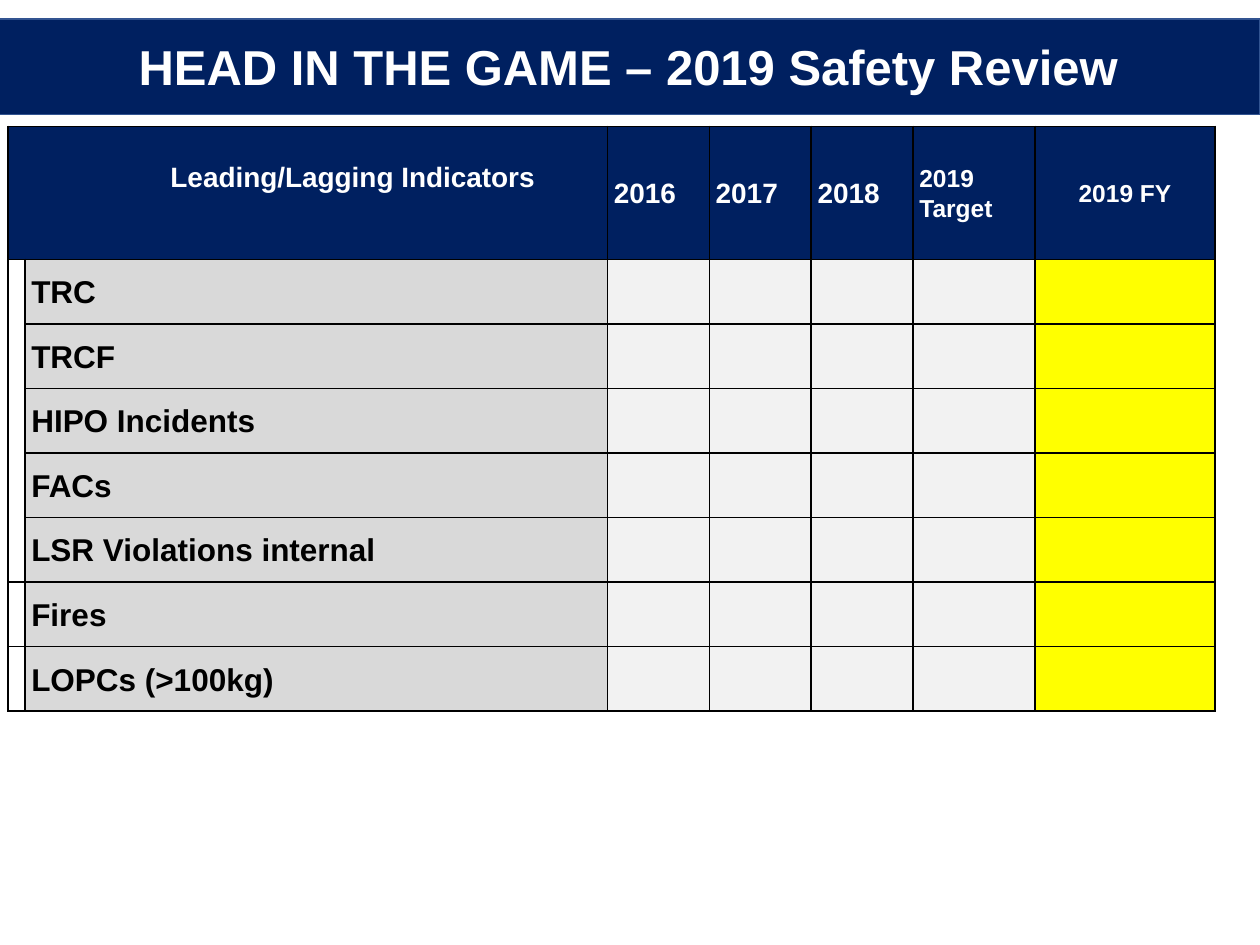
from lxml.etree import SubElement
from pptx import Presentation
from pptx.dml.color import RGBColor
from pptx.enum.shapes import MSO_SHAPE as Shape
from pptx.enum.text import MSO_ANCHOR as Anchor, PP_ALIGN as Align
from pptx.oxml.ns import qn
from pptx.util import Pt

NAVY = RGBColor(0x00, 0x20, 0x60)
EDGE = RGBColor(0x32, 0x54, 0x91)
WHITE = RGBColor(0xFF, 0xFF, 0xFF)
BLACK = RGBColor(0x00, 0x00, 0x00)
GREY = RGBColor(0xD9, 0xD9, 0xD9)
PALE = RGBColor(0xF2, 0xF2, 0xF2)
YELLOW = RGBColor(0xFF, 0xFF, 0x00)

COLUMNS = [9.7, 332.9, 58.2, 58.2, 58.2, 69.7, 102.9]
HEADER_HEIGHT, ROW_HEIGHT = 76, 36.9
HEADERS = [
    (0, "Leading/Lagging Indicators", 16, Align.CENTER),
    (2, "2016", 16, Align.LEFT),
    (3, "2017", 16, Align.LEFT),
    (4, "2018", 16, Align.LEFT),
    (5, "2019 Target", 14, Align.LEFT),
    (6, "2019 FY", 14, Align.CENTER),
]
INDICATORS = ["TRC", "TRCF", "HIPO Incidents", "FACs",
              "LSR Violations internal", "Fires", "LOPCs (>100kg)"]
INTERNAL_ROWS = 5


def write(para, text, size, color, align=Align.LEFT):
    """Put bold Arial text into a paragraph."""
    para.text = text
    para.alignment = align
    font = para.font
    font.name, font.size, font.bold = "Arial", Pt(size), True
    font.color.rgb = color


def add_border(cell):
    """Draw a thin black line on all four sides of a cell."""
    properties = cell._tc.get_or_add_tcPr()
    for side in ("a:lnL", "a:lnR", "a:lnT", "a:lnB"):
        line = SubElement(properties, qn(side), w=str(Pt(1)))
        fill = SubElement(line, qn("a:solidFill"))
        SubElement(fill, qn("a:srgbClr"), val=str(BLACK))


def style_cell(cell, fill=None):
    """Give a cell its border, insets and fill."""
    add_border(cell)
    cell.margin_left = cell.margin_right = Pt(3.6)
    cell.margin_top = cell.margin_bottom = 0
    cell.vertical_anchor = Anchor.MIDDLE
    if fill is None:
        cell.margin_left = cell.margin_right = 0
        cell.fill.background()
    else:
        cell.fill.solid()
        cell.fill.fore_color.rgb = fill


def write_cell(cell, text, size, color, align=Align.LEFT):
    """Write the single paragraph of a table cell."""
    para = cell.text_frame.paragraphs[0]
    write(para, text, size, color, align)
    para.line_spacing = 1.07


def add_title(page, left, top, width, height):
    """Add the navy band with the title over it."""
    band = page.shapes.add_shape(Shape.RECTANGLE, Pt(left), Pt(top), Pt(width), Pt(height))
    band.shadow.inherit = False
    band.fill.solid()
    band.fill.fore_color.rgb = NAVY
    band.line.color.rgb = EDGE
    band.line.width = Pt(1)

    box = page.shapes.add_textbox(Pt(left + 5), Pt(top + 3.6), Pt(width - 11.5), Pt(75))
    frame = box.text_frame
    frame.word_wrap = True
    frame.margin_top = Pt(6.6)
    write(frame.paragraphs[0], "HEAD IN THE GAME – 2019 Safety Review", 28, WHITE, Align.CENTER)


def add_indicators(page, left, top):
    """Add the table of safety indicators by year."""
    heights = [HEADER_HEIGHT] + [ROW_HEIGHT] * len(INDICATORS)
    table = page.shapes.add_table(
        len(heights), len(COLUMNS), Pt(left), Pt(top), Pt(sum(COLUMNS)), Pt(sum(heights))
    ).table
    table.first_row = table.horz_banding = False
    for column, width in zip(table.columns, COLUMNS):
        column.width = Pt(width)
    for row, height in zip(table.rows, heights):
        row.height = Pt(height)

    body_fills = [None, GREY] + [PALE] * 4 + [YELLOW]
    for index, row in enumerate(table.rows):
        fills = body_fills if index else [NAVY] * len(COLUMNS)
        for cell, fill in zip(row.cells, fills):
            style_cell(cell, fill)

    table.cell(0, 0).merge(table.cell(0, 1))
    table.cell(1, 0).merge(table.cell(INTERNAL_ROWS, 0))
    for column, text, size, align in HEADERS:
        write_cell(table.cell(0, column), text, size, WHITE, align)
    table.cell(0, 0).margin_left = Pt(55)
    table.cell(0, 0).margin_bottom = Pt(18)
    for index, name in enumerate(INDICATORS, 1):
        write_cell(table.cell(index, 1), name, 18, BLACK)


def main():
    """Build the safety review slide."""
    deck = Presentation()
    deck.slide_width, deck.slide_height = Pt(720), Pt(540)
    page = deck.slides.add_slide(deck.slide_layouts[6])
    add_title(page, -0.7, 10.8, 720.7, 54.7)
    add_indicators(page, 4.6, 72.2)
    deck.save("out.pptx")


if __name__ == "__main__":
    main()
